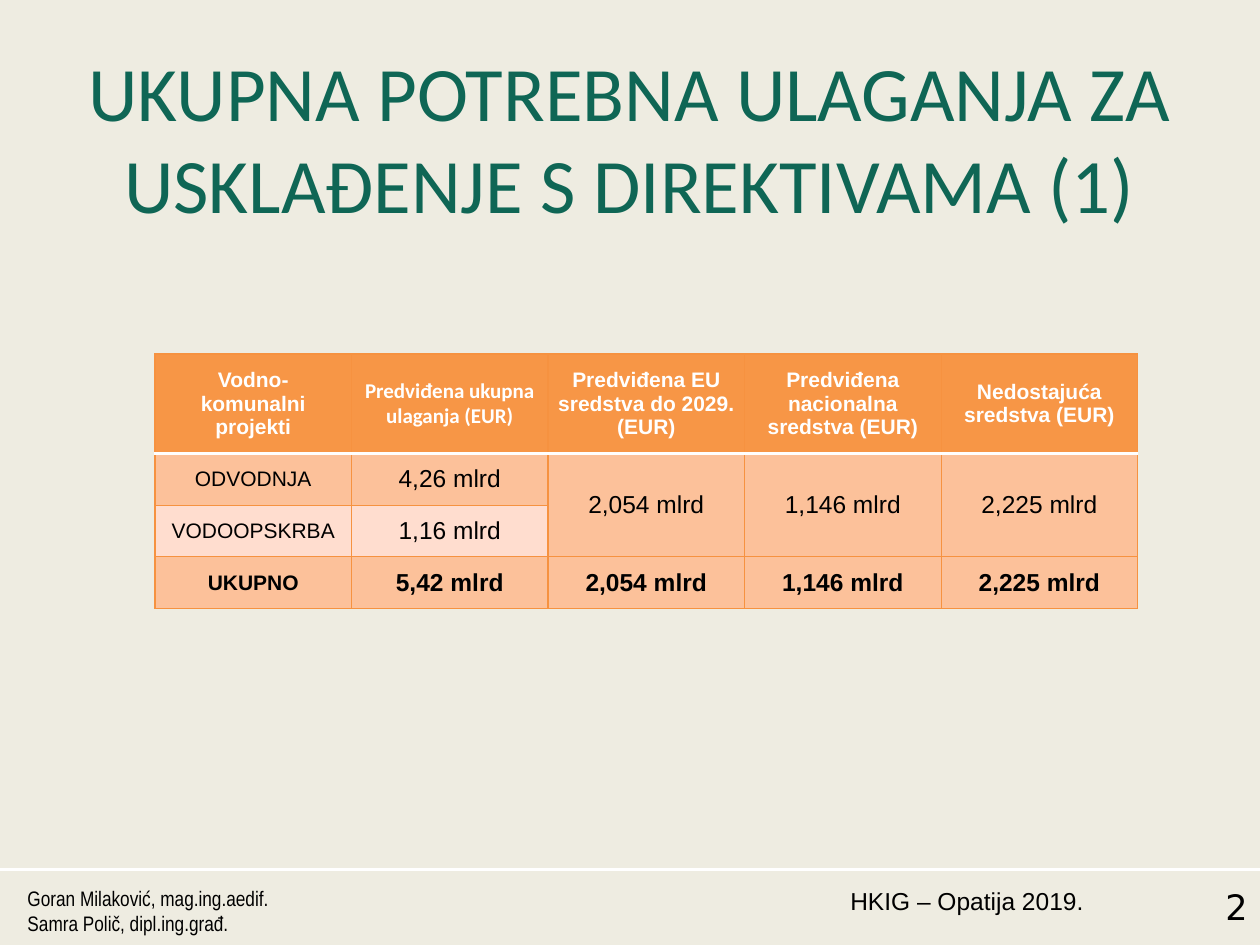
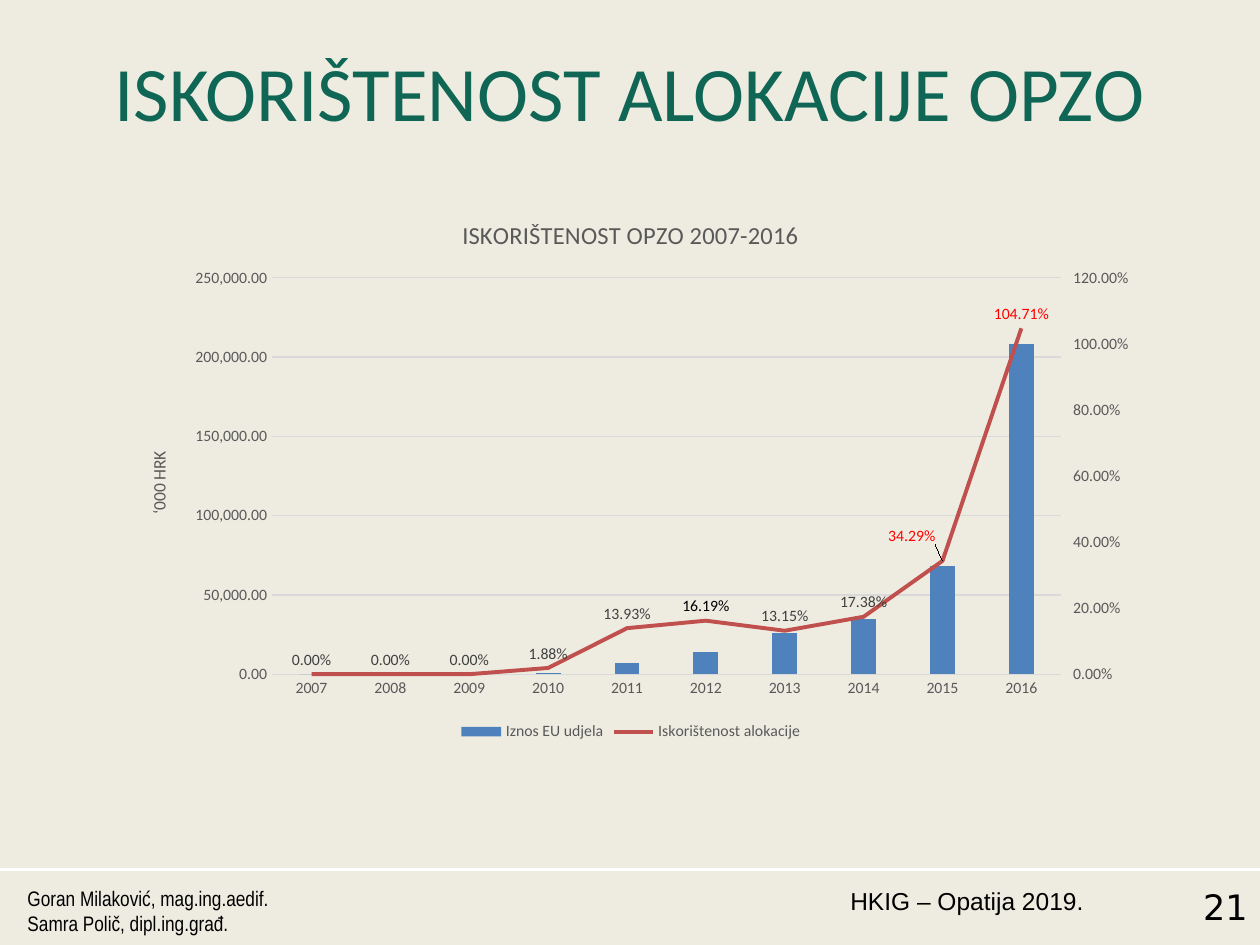
from copy import deepcopy
from dataclasses import dataclass

from lxml.etree import SubElement
from pptx import Presentation
from pptx.chart.axis import CategoryAxis, ValueAxis
from pptx.chart.chart import Chart
from pptx.chart.data import CategoryChartData
from pptx.chart.series import LineSeries
from pptx.dml.color import RGBColor
from pptx.enum.chart import XL_CHART_TYPE, XL_LABEL_POSITION, XL_LEGEND_POSITION, XL_MARKER_STYLE, XL_TICK_MARK
from pptx.enum.shapes import MSO_CONNECTOR
from pptx.enum.text import MSO_ANCHOR, MSO_AUTO_SIZE, PP_ALIGN
from pptx.oxml import parse_xml
from pptx.oxml.ns import nsdecls, qn
from pptx.slide import Slide
from pptx.table import _Cell
from pptx.text.text import Font
from pptx.util import Inches, Pt


@dataclass(frozen=True)
class Theme:
    background: str = "EEECE1"
    title: str = "0F6655"
    ink: str = "000000"
    white: str = "FFFFFF"
    orange: str = "F79646"
    border: str = "F69240"
    band_dark: str = "FCC19A"
    band_light: str = "FFDDCF"
    bar: str = "4F81BD"
    line: str = "C0504D"
    grid: str = "D9D9D9"
    axis_text: str = "595959"
    label: str = "404040"
    alert: str = "FF0000"
    heading_font: str = "Calibri"
    body_font: str = "Arial"
    title_size: int = 44
    number_size: int = 20
    text_size: int = 14
    small_size: int = 12
    axis_title_size: int = 10
    chart_size: int = 9


THEME = Theme()


@dataclass(frozen=True)
class FooterText:
    left: float
    width: float
    lines: tuple[str, ...]
    font: str
    size: int
    alignment: PP_ALIGN


@dataclass(frozen=True)
class TableRow:
    texts: tuple[str, ...]
    height: float
    fill: str
    color: str = THEME.ink
    bold: bool = False
    value_size: int = THEME.text_size


AUTHORS = FooterText(0.12, 2.17, ("Goran Milaković, mag.ing.aedif.", "Samra Polič, dipl.ing.građ."),
                     "Arial Narrow", THEME.small_size, PP_ALIGN.LEFT)
EVENT = FooterText(6.57, 2.13, ("HKIG – Opatija 2019.",), THEME.body_font, THEME.text_size, PP_ALIGN.RIGHT)

INVESTMENT_ROWS = (
    TableRow(("Vodno-komunalni projekti", "Predviđena ukupna ulaganja (EUR)",
              "Predviđena EU sredstva do 2029. (EUR)", "Predviđena nacionalna sredstva (EUR)",
              "Nedostajuća sredstva (EUR)"),
             0.79, THEME.orange, THEME.white, True, THEME.small_size),
    TableRow(("ODVODNJA", "4,26 mlrd", "2,054 mlrd", "1,146 mlrd", "2,225 mlrd"), 0.41, THEME.band_dark),
    TableRow(("VODOOPSKRBA", "1,16 mlrd", "", "", ""), 0.41, THEME.band_light),
    TableRow(("UKUPNO", "5,42 mlrd", "2,054 mlrd", "1,146 mlrd", "2,225 mlrd"), 0.41, THEME.band_dark, bold=True),
)

YEARS = [str(year) for year in range(2007, 2017)]
EU_AMOUNTS = (0, 0, 0, 1000, 7000, 14000, 26000, 35000, 68000, 208000)
ALLOCATION_SHARES = (0, 0, 0, 0.0188, 0.1393, 0.1619, 0.1315, 0.1738, 0.3429, 1.0471)
LABEL_COLORS = {"2012": THEME.ink, "2015": THEME.alert, "2016": THEME.alert}


def rgb(color: str) -> RGBColor:
    return RGBColor.from_string(color)


def style_font(font: Font, name: str, size: int, color: str, bold: bool = False) -> None:
    font.name = name
    font.size = Pt(size)
    font.color.rgb = rgb(color)
    font.bold = bold


def add_footer_text(slide: Slide, footer: FooterText) -> None:
    box = slide.shapes.add_textbox(Inches(footer.left), Inches(6.98), Inches(footer.width), Inches(0.52))
    frame = box.text_frame
    frame.word_wrap = True
    frame.text = "\n".join(footer.lines)
    for paragraph in frame.paragraphs:
        paragraph.alignment = footer.alignment
        style_font(paragraph.font, footer.font, footer.size, THEME.ink)


def add_base_slide(presentation: Presentation, title_text: str, number: int) -> Slide:
    slide = presentation.slides.add_slide(presentation.slide_layouts.get_by_name("Title Only"))
    title = slide.shapes.title
    title.left, title.top, title.width, title.height = map(Inches, (0.5, 0.3, 9, 1.25))
    frame = title.text_frame
    frame.text = title_text
    frame.word_wrap = True
    frame.auto_size = MSO_AUTO_SIZE.NONE
    frame.vertical_anchor = MSO_ANCHOR.TOP
    paragraph = frame.paragraphs[0]
    paragraph.alignment = PP_ALIGN.CENTER
    style_font(paragraph.font, THEME.heading_font, THEME.title_size, THEME.title)

    rule = slide.shapes.add_connector(MSO_CONNECTOR.STRAIGHT, 0, Inches(6.9), Inches(10), Inches(6.9))
    rule.line.color.rgb = rgb(THEME.white)
    rule.line.width = Pt(1.5)
    SubElement(rule._element.spPr, qn("a:effectLst"))

    page_number = FooterText(8.78, 1.22, (str(number),), "DejaVu Sans", THEME.number_size, PP_ALIGN.RIGHT)
    for footer in (AUTHORS, EVENT, page_number):
        add_footer_text(slide, footer)
    return slide


def set_cell_border(cell: _Cell, side: str, position: int, color: str, width: float) -> None:
    cell._tc.get_or_add_tcPr().insert(position, parse_xml(
        f'<a:ln{side} {nsdecls("a")} w="{Pt(width)}"><a:solidFill><a:srgbClr val="{color}"/>'
        f'</a:solidFill></a:ln{side}>'))


def add_investment_table(slide: Slide) -> None:
    column_count = len(INVESTMENT_ROWS[0].texts)
    table = slide.shapes.add_table(len(INVESTMENT_ROWS), column_count, Inches(1.23), Inches(2.81),
                                   Inches(7.8), Inches(2.02)).table
    for column in table.columns:
        column.width = Inches(1.56)
    for column_index in range(2, column_count):
        table.cell(1, column_index).merge(table.cell(2, column_index))
    for row_index, row in enumerate(INVESTMENT_ROWS):
        table.rows[row_index].height = Inches(row.height)
        for column_index, text in enumerate(row.texts):
            cell = table.cell(row_index, column_index)
            cell.fill.solid()
            cell.fill.fore_color.rgb = rgb(row.fill)
            cell.vertical_anchor = MSO_ANCHOR.MIDDLE
            is_header = row_index == 0
            if is_header and column_index > 0:
                cell.margin_left = cell.margin_right = cell.margin_top = cell.margin_bottom = 0
            for position, side in enumerate("LRTB"):
                under_header = (side == "B" and is_header) or (side == "T" and row_index == 1)
                color, width = (THEME.white, 2) if under_header else (THEME.border, 0.75)
                set_cell_border(cell, side, position, color, width)
            if text:
                cell.text = text
                paragraph = cell.text_frame.paragraphs[0]
                paragraph.alignment = PP_ALIGN.CENTER
                font_name = THEME.heading_font if is_header and column_index == 1 else THEME.body_font
                size = THEME.small_size if column_index == 0 else row.value_size
                style_font(paragraph.font, font_name, size, row.color, row.bold)


def move_shares_to_second_axis(chart: Chart) -> None:
    bar_chart = chart.plots[0]._element
    shares = bar_chart.findall(qn("c:ser"))[1]
    bar_chart.remove(shares)
    for bar_setting in shares.findall(qn("c:invertIfNegative")):
        shares.remove(bar_setting)
    line_chart = parse_xml(
        f'<c:lineChart {nsdecls("c")}><c:grouping val="standard"/><c:varyColors val="0"/>'
        '<c:marker val="1"/><c:axId val="1001"/><c:axId val="1002"/></c:lineChart>')
    line_chart.insert(2, shares)
    bar_chart.addnext(line_chart)

    primary = chart.value_axis._element
    second_category = deepcopy(chart.category_axis._element)
    second_value = deepcopy(primary)
    for element, own, crossing in ((second_category, "1001", "1002"), (second_value, "1002", "1001")):
        element.find(qn("c:axId")).set("val", own)
        element.find(qn("c:crossAx")).set("val", crossing)
    second_value.find(qn("c:axPos")).set("val", "r")
    second_value.find(qn("c:crosses")).set("val", "max")
    primary.addnext(second_value)
    second_value.addnext(second_category)
    CategoryAxis(second_category).visible = False

    share_axis = ValueAxis(second_value)
    share_axis.has_major_gridlines = False
    share_axis.has_title = False
    share_axis.maximum_scale = 1.2
    share_axis.major_unit = 0.2
    share_axis.major_tick_mark = XL_TICK_MARK.OUTSIDE
    share_axis.tick_labels.number_format = "0.00%"


def style_axes(chart: Chart) -> None:
    category_axis, value_axis = chart.category_axis, chart.value_axis
    for axis in (category_axis, value_axis):
        axis.major_tick_mark = axis.minor_tick_mark = XL_TICK_MARK.NONE
        style_font(axis.tick_labels.font, THEME.heading_font, THEME.chart_size, THEME.axis_text)
    value_axis.has_major_gridlines = True
    for line in (category_axis.format.line, value_axis.major_gridlines.format.line):
        line.color.rgb = rgb(THEME.grid)
        line.width = Pt(0.75)
    value_axis.format.line.fill.background()
    value_axis.minimum_scale = 0
    value_axis.maximum_scale = 250000
    value_axis.major_unit = 50000
    value_axis.tick_labels.number_format = "#,##0.00"
    value_axis.tick_labels.number_format_is_linked = False
    value_axis.axis_title.text_frame.text = "‘000 HRK"
    style_font(value_axis.axis_title.text_frame.paragraphs[0].font, THEME.heading_font,
               THEME.axis_title_size, THEME.axis_text)


def style_share_series(series: LineSeries) -> None:
    series.format.line.color.rgb = rgb(THEME.line)
    series.format.line.width = Pt(2.25)
    series.smooth = False
    series.marker.style = XL_MARKER_STYLE.NONE
    labels = series.data_labels
    labels.show_value = True
    labels.number_format = "0.00%"
    labels.number_format_is_linked = False
    labels.position = XL_LABEL_POSITION.ABOVE
    style_font(labels.font, THEME.heading_font, THEME.chart_size, THEME.label)
    for year, color in LABEL_COLORS.items():
        label = series.points[YEARS.index(year)].data_label
        style_font(label.font, THEME.heading_font, THEME.chart_size, color)
        label.position = XL_LABEL_POSITION.ABOVE
    shifted = series._element.xpath(f'c:dLbls/c:dLbl[c:idx/@val="{YEARS.index("2015")}"]/c:idx')[0]
    shifted.addnext(parse_xml(
        f'<c:layout {nsdecls("c")}><c:manualLayout><c:x val="-0.03"/><c:y val="-0.02"/>'
        '</c:manualLayout></c:layout>'))


def place_plot_area(chart: Chart) -> None:
    plot_area = chart._chartSpace.chart.plotArea
    for layout in plot_area.findall(qn("c:layout")):
        plot_area.remove(layout)
    plot_area.insert(0, parse_xml(
        f'<c:layout {nsdecls("c")}><c:manualLayout><c:layoutTarget val="inner"/><c:xMode val="edge"/>'
        '<c:yMode val="edge"/><c:x val="0.15"/><c:y val="0.15"/><c:w val="0.77"/><c:h val="0.72"/>'
        '</c:manualLayout></c:layout>'))


def add_allocation_chart(slide: Slide) -> None:
    data = CategoryChartData()
    data.categories = YEARS
    data.add_series("Iznos EU udjela", EU_AMOUNTS, "#,##0.00")
    data.add_series("Iskorištenost alokacije", ALLOCATION_SHARES, "0.00%")
    chart = slide.shapes.add_chart(XL_CHART_TYPE.COLUMN_CLUSTERED, Inches(0.94), Inches(1.55),
                                   Inches(8.13), Inches(4.37), data).chart
    style_font(chart.font, THEME.heading_font, THEME.axis_title_size, THEME.ink)
    chart.has_title = True
    chart.chart_title.text_frame.text = "ISKORIŠTENOST OPZO 2007-2016"
    style_font(chart.chart_title.text_frame.paragraphs[0].font, THEME.heading_font,
               THEME.text_size, THEME.axis_text)
    chart.has_legend = True
    chart.legend.position = XL_LEGEND_POSITION.BOTTOM
    chart.legend.include_in_layout = False
    style_font(chart.legend.font, THEME.heading_font, THEME.chart_size, THEME.axis_text)
    style_axes(chart)
    move_shares_to_second_axis(chart)
    place_plot_area(chart)

    bar_plot, line_plot = chart.plots
    bar_plot.gap_width = 219
    bar_plot.overlap = -27
    bar_plot.vary_by_categories = False
    bar_fill = bar_plot.series[0].format.fill
    bar_fill.solid()
    bar_fill.fore_color.rgb = rgb(THEME.bar)
    style_share_series(line_plot.series[0])


def main() -> None:
    presentation = Presentation()
    presentation.slide_width = Inches(10)
    presentation.slide_height = Inches(7.5)
    background = presentation.slide_master.background.fill
    background.solid()
    background.fore_color.rgb = rgb(THEME.background)
    add_investment_table(add_base_slide(
        presentation, "UKUPNA POTREBNA ULAGANJA ZA USKLAĐENJE S DIREKTIVAMA (1)", 2))
    add_allocation_chart(add_base_slide(presentation, "ISKORIŠTENOST ALOKACIJE OPZO", 21))
    presentation.save("out.pptx")


if __name__ == "__main__":
    main()
